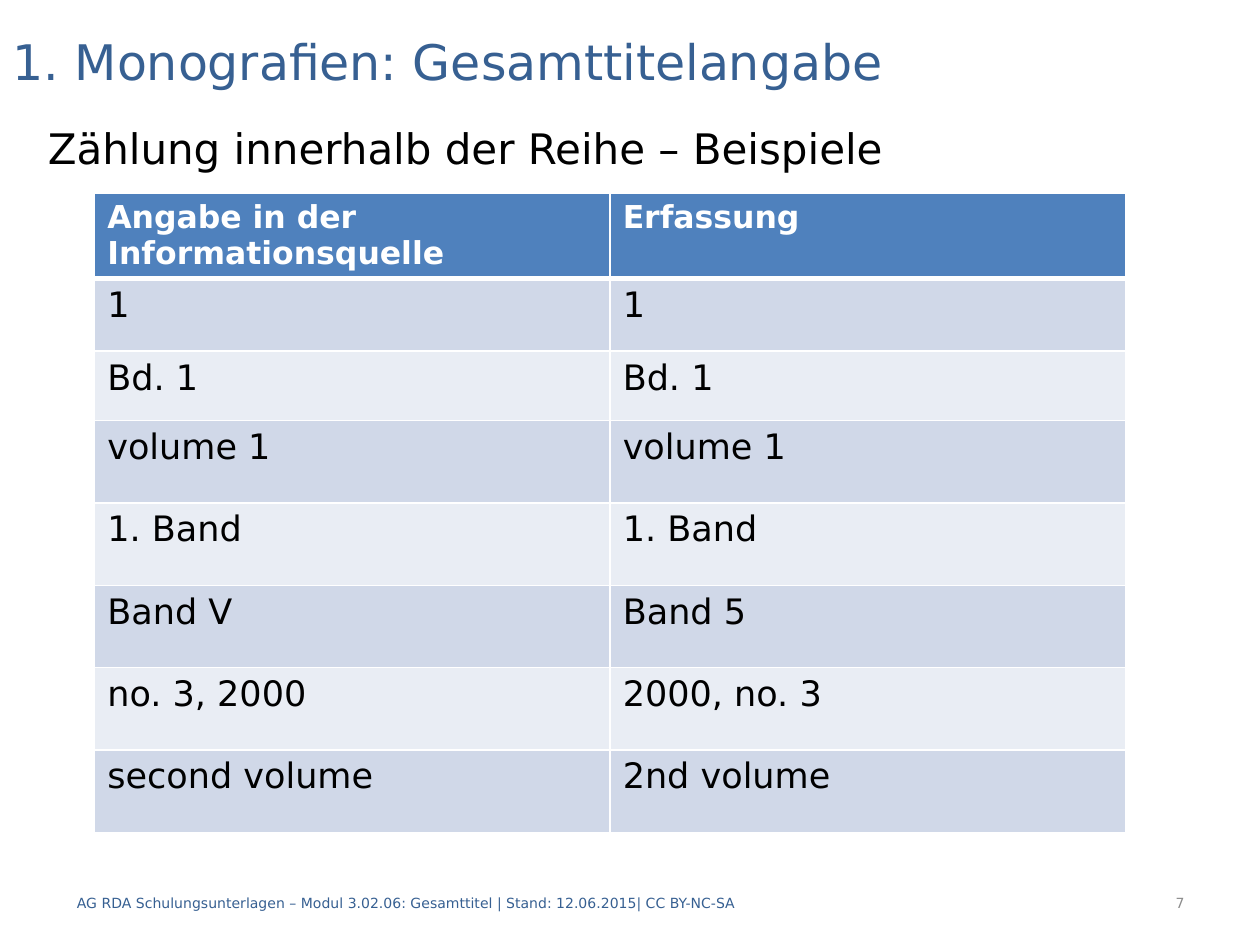
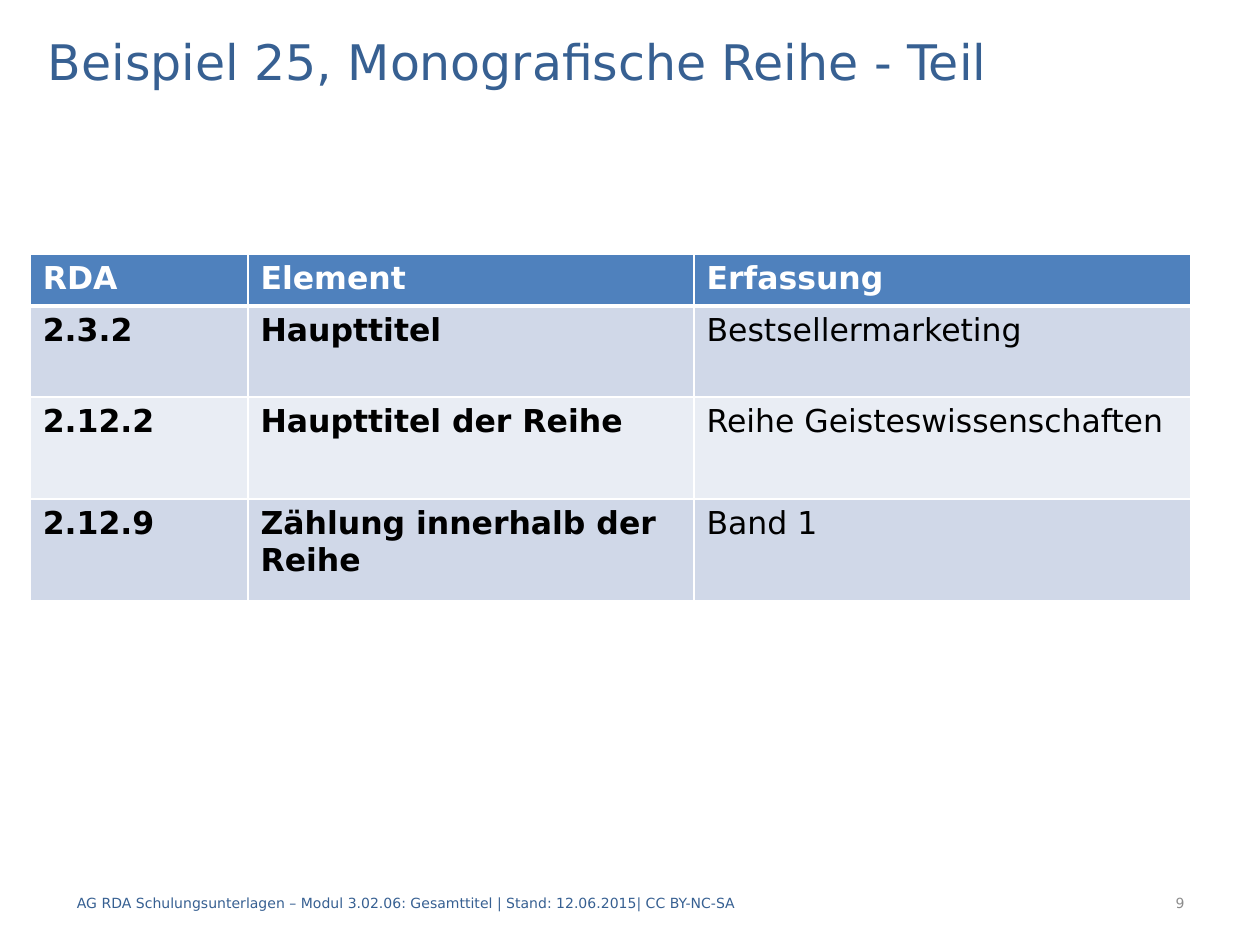
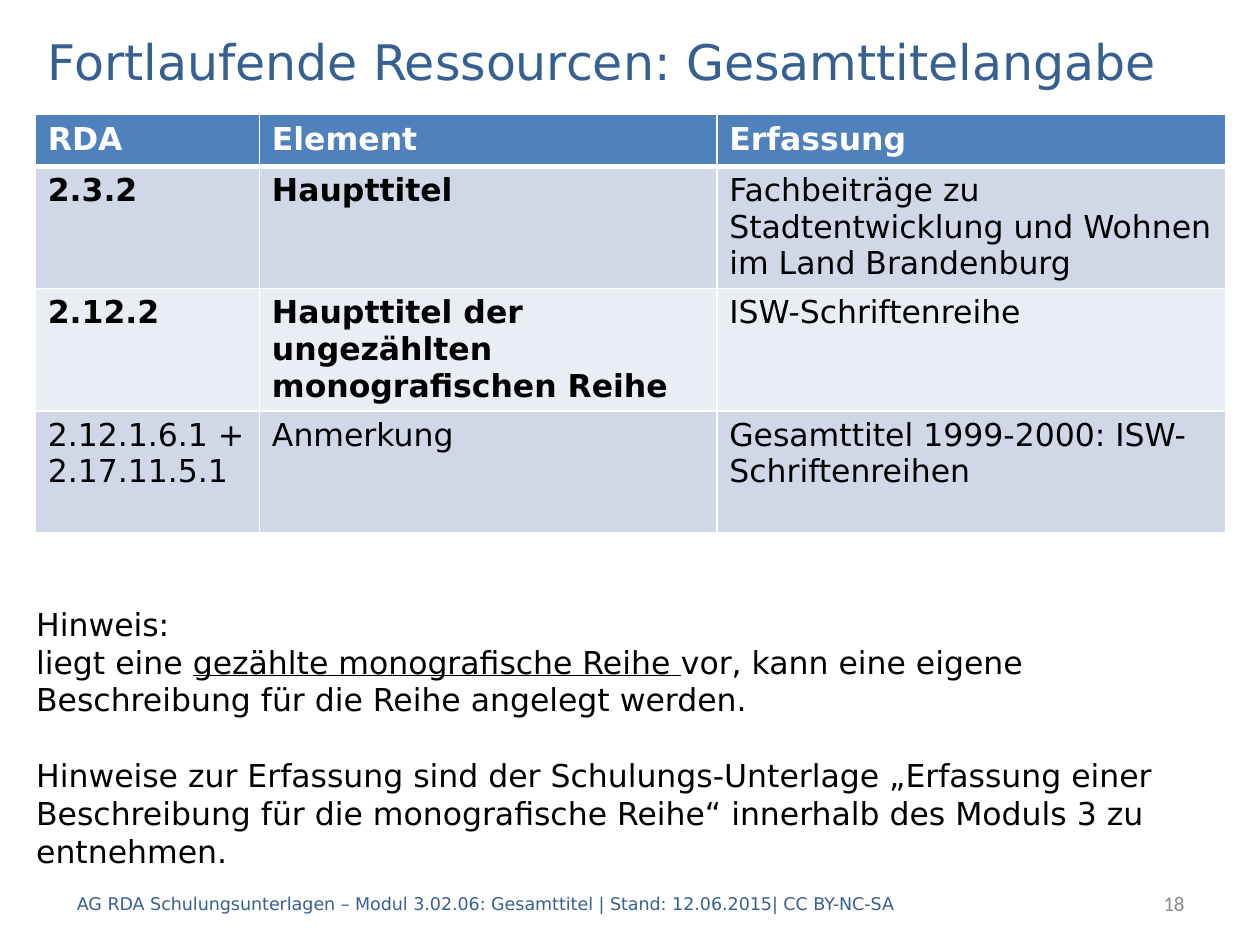
from lxml.etree import SubElement
from pptx import Presentation
from pptx.dml.color import RGBColor
from pptx.enum.text import MSO_ANCHOR as Anchor, MSO_AUTO_SIZE as AutoSize, PP_ALIGN as Align
from pptx.oxml import parse_xml
from pptx.oxml.ns import nsdecls, qn
from pptx.util import Cm, Pt

rgb = RGBColor.from_string
FONT = "DejaVu Sans"
WHITE, BLACK, GREY = "FFFFFF", "000000", "8C8C8C"
TITLE_BLUE, HEADER_BLUE = "376092", "4F81BD"
BANDS = ["E9EDF4", "D0D8E8"]
FOOTER = "AG RDA Schulungsunterlagen – Modul 3.02.06: Gesamttitel | Stand: 12.06.2015| CC BY-NC-SA"
TITLE_ONLY, TITLE_AND_BODY = 5, 1


def add_run(paragraph, text, size, color, **formats):
    run = paragraph.add_run()
    run.text = text
    for name, value in {"name": FONT, "size": Pt(size), **formats}.items():
        setattr(run.font, name, value)
    run.font.color.rgb = rgb(color)


def place(shape, left, top, width, height, anchor=Anchor.TOP):
    """Position a text shape and return its first paragraph."""
    for name, value in {"left": left, "top": top, "width": width, "height": height}.items():
        setattr(shape, name, Cm(value))
    frame = shape.text_frame
    for name, value in {"word_wrap": True, "auto_size": AutoSize.NONE, "vertical_anchor": anchor}.items():
        setattr(frame, name, value)
    return frame.paragraphs[0]


pages = [
    {
        "title": "1. Monografien: Gesamttitelangabe",
        "title_left": 0,
        "title_width": 25.4,
        "subtitle": "Zählung innerhalb der Reihe – Beispiele",
        "number": "7",
        "table_at": (1.91, 3.89),
        "columns": [10.39, 10.39],
        "rows": [1.7, 1.46, 1.4] + [1.66] * 5,
        "body_size": 20,
        "bold_rows": [],
        "cells": [
            ("Angabe in der Informationsquelle", "Erfassung"),
            ("1", "1"),
            ("Bd. 1", "Bd. 1"),
            ("volume 1", "volume 1"),
            ("1. Band", "1. Band"),
            ("Band V", "Band 5"),
            ("no. 3, 2000", "2000, no. 3"),
            ("second volume", "2nd volume"),
        ],
    },
    {
        "title": "Beispiel 25, Monografische Reihe - Teil",
        "number": "9",
        "table_at": (0.61, 5.13),
        "columns": [4.39, 8.99, 10.01],
        "rows": [1.04, 1.83, 2.06, 2.06],
        "bold_rows": [1, 2, 3],
        "cells": [
            ("RDA", "Element", "Erfassung"),
            ("2.3.2", "Haupttitel", "Bestsellermarketing"),
            ("2.12.2", "Haupttitel der Reihe", "Reihe Geisteswissenschaften"),
            ("2.12.9", "Zählung innerhalb der Reihe", "Band 1"),
        ],
    },
    {
        "title": "Fortlaufende Ressourcen: Gesamttitelangabe",
        "number": "18",
        "number_format": {"size": 12, "name": "Calibri"},
        "footer_size": 10,
        "table_at": (0.71, 2.31),
        "columns": [4.52, 9.22, 10.26],
        "rows": [1.04] + [2.46] * 3,
        "bold_rows": [1, 2],
        "cells": [
            ("RDA", "Element", "Erfassung"),
            ("2.3.2", "Haupttitel",
             "Fachbeiträge zu Stadtentwicklung und Wohnen im Land Brandenburg"),
            ("2.12.2", "Haupttitel der ungezählten monografischen Reihe", "ISW-Schriftenreihe"),
            ("2.12.1.6.1 + 2.17.11.5.1", "Anmerkung", "Gesamttitel 1999-2000: ISW-Schriftenreihen"),
        ],
    },
]

presentation = Presentation()
presentation.slide_width, presentation.slide_height = Cm(25.4), Cm(19.05)

for page in pages:
    layout = TITLE_AND_BODY if "subtitle" in page else TITLE_ONLY
    slide = presentation.slides.add_slide(presentation.slide_layouts[layout])

    paragraph = place(slide.shapes.title, page.get("title_left", 0.71), 0.51,
                      page.get("title_width", 24), 1.42, Anchor.MIDDLE)
    paragraph.alignment = Align.LEFT
    add_run(paragraph, page["title"], 28, TITLE_BLUE)

    if "subtitle" in page:
        paragraph = place(slide.placeholders[1], 0.71, 2.34, 24, 15.19)
        SubElement(paragraph._p.get_or_add_pPr(), qn("a:buNone"))
        add_run(paragraph, page["subtitle"], 24, BLACK)

    footer = slide.shapes.add_textbox(0, 0, 0, 0)
    paragraph = place(footer, 1.3, 17.7, 18.59, 1.02, Anchor.MIDDLE)
    add_run(paragraph, FOOTER, page.get("footer_size", 8), TITLE_BLUE)

    number = slide.shapes.add_textbox(0, 0, 0, 0)
    paragraph = place(number, 20.09, 17.7, 4.04, 1.02, Anchor.MIDDLE)
    paragraph.alignment = Align.RIGHT
    add_run(paragraph, page["number"], color=GREY, **page.get("number_format", {"size": 8}))

    left, top = page["table_at"]
    widths, heights = page["columns"], page["rows"]
    table = slide.shapes.add_table(len(heights), len(widths), Cm(left), Cm(top),
                                   Cm(sum(widths)), Cm(sum(heights))).table
    for column, width in zip(table.columns, widths):
        column.width = Cm(width)
    for row_index, (row, height, texts) in enumerate(zip(table.rows, heights, page["cells"])):
        row.height = Cm(height)
        header = row_index == 0
        for column_index, (cell, text) in enumerate(zip(row.cells, texts)):
            cell.fill.solid()
            cell.fill.fore_color.rgb = rgb(HEADER_BLUE if header else BANDS[row_index % 2])
            bold = header or (row_index in page["bold_rows"] and column_index < 2)
            add_run(cell.text_frame.paragraphs[0], text, 18 if header else page.get("body_size", 18),
                    WHITE if header else BLACK, bold=bold)
            border_widths = {"L": 1, "R": 1, "T": 3 if row_index == 1 else 1, "B": 3 if header else 1}
            for position, (side, points) in enumerate(border_widths.items()):
                border = parse_xml(
                    f'<a:ln{side} {nsdecls("a")} w="{Pt(points)}"><a:solidFill>'
                    f'<a:srgbClr val="{WHITE}"/></a:solidFill></a:ln{side}>')
                cell._tc.get_or_add_tcPr().insert(position, border)

hint = slide.shapes.add_textbox(0, 0, 0, 0)
paragraph = place(hint, 0.48, 12.07, 23.6, 6.32)
add_run(paragraph, "Hinweis:", 18, BLACK)
paragraph = hint.text_frame.add_paragraph()
add_run(paragraph, "liegt eine ", 18, BLACK)
add_run(paragraph, "gezählte monografische Reihe ", 18, BLACK, underline=True)
add_run(paragraph, "vor, kann eine eigene Beschreibung für die Reihe angelegt werden.", 18, BLACK)
paragraph = hint.text_frame.add_paragraph()
paragraph.space_before = Pt(21.5)
add_run(paragraph, "Hinweise zur Erfassung sind der Schulungs-Unterlage „Erfassung einer Beschreibung "
        "für die monografische Reihe“ innerhalb des Moduls 3 zu entnehmen.", 18, BLACK)

presentation.save("out.pptx")
